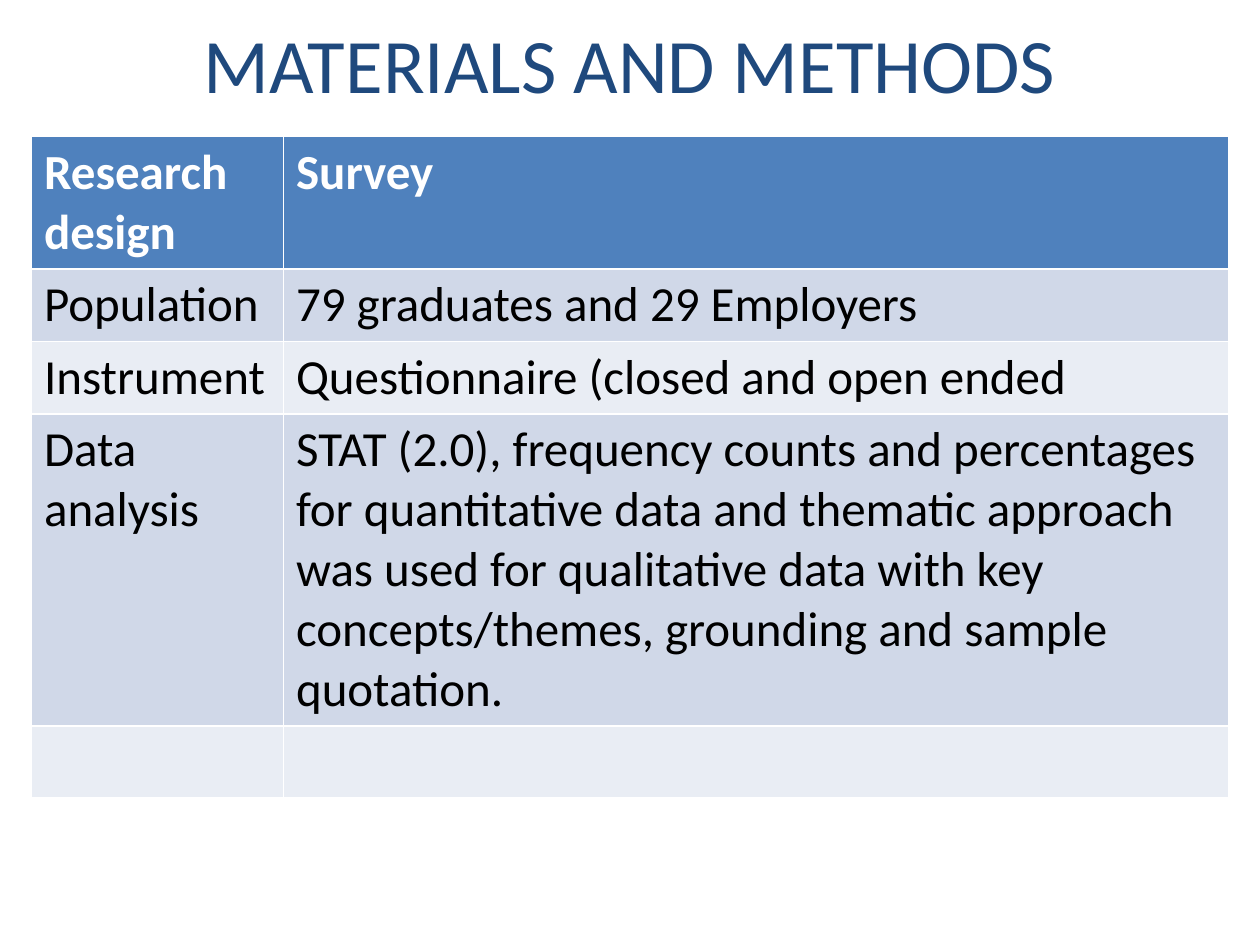
from dataclasses import dataclass

import pptx
import pptx.dml.color
import pptx.enum.text
import pptx.util

Pt = pptx.util.Pt
RGB = pptx.dml.color.RGBColor.from_string
PP_ALIGN = pptx.enum.text.PP_ALIGN
ANCHOR = pptx.enum.text.MSO_ANCHOR


@dataclass(frozen=True)
class Theme:
    font: str = "Calibri"
    title_size: int = 44
    body_size: int = 28
    title: str = "1F497D"
    header_text: str = "FFFFFF"
    body_text: str = "000000"
    header_fill: str = "4F81BD"
    band_fills: tuple = ("E9EDF4", "D0D8E8")


THEME = Theme()

METHODS = [
    ("Research design", "Survey"),
    ("Population", "79 graduates and 29 Employers"),
    ("Instrument", "Questionnaire (closed and open ended"),
    ("Data analysis",
     "STAT (2.0), frequency counts and percentages for quantitative data "
     "and thematic approach was used for qualitative data with key "
     "concepts/themes, grounding and sample quotation."),
    ("", ""),
]
COLUMN_SHARES = (4, 15)
ROW_HEIGHTS = (75, 41, 41, 178, 41)


def write_text(frame, text, *, size, color, bold=False, align=PP_ALIGN.LEFT):
    paragraph = frame.paragraphs[0]
    paragraph.alignment = align
    run = paragraph.add_run()
    run.text = text
    run.font.name = THEME.font
    run.font.size = Pt(size)
    run.font.bold = bold
    run.font.color.rgb = RGB(color)


def place_heading(slide, left, top, width, height):
    heading = slide.shapes.title
    heading.left, heading.top = Pt(left), Pt(top)
    heading.width, heading.height = Pt(width), Pt(height)
    heading.text_frame.vertical_anchor = ANCHOR.MIDDLE
    write_text(heading.text_frame, "MATERIALS AND METHODS",
               size=THEME.title_size, color=THEME.title,
               align=PP_ALIGN.CENTER)


def place_methods(slide, left, top, width):
    methods = slide.shapes.add_table(
        len(METHODS), len(COLUMN_SHARES),
        Pt(left), Pt(top), Pt(width), Pt(sum(ROW_HEIGHTS))).table
    for column, share in zip(methods.columns, COLUMN_SHARES):
        column.width = Pt(width * share / sum(COLUMN_SHARES))
    for index, (row, entries) in enumerate(zip(methods.rows, METHODS)):
        row.height = Pt(ROW_HEIGHTS[index])
        is_header = index == 0
        fill = THEME.header_fill if is_header else THEME.band_fills[index % 2]
        color = THEME.header_text if is_header else THEME.body_text
        for cell, entry in zip(row.cells, entries):
            cell.fill.solid()
            cell.fill.fore_color.rgb = RGB(fill)
            if entry:
                write_text(cell.text_frame, entry, size=THEME.body_size,
                           color=color, bold=is_header)


def main():
    deck = pptx.Presentation()
    deck.slide_width, deck.slide_height = Pt(720), Pt(540)
    slide = deck.slides.add_slide(deck.slide_layouts[5])
    place_heading(slide, 24, 6, 672, 60)
    place_methods(slide, 18, 78, 684)
    deck.save("out.pptx")


if __name__ == "__main__":
    main()
